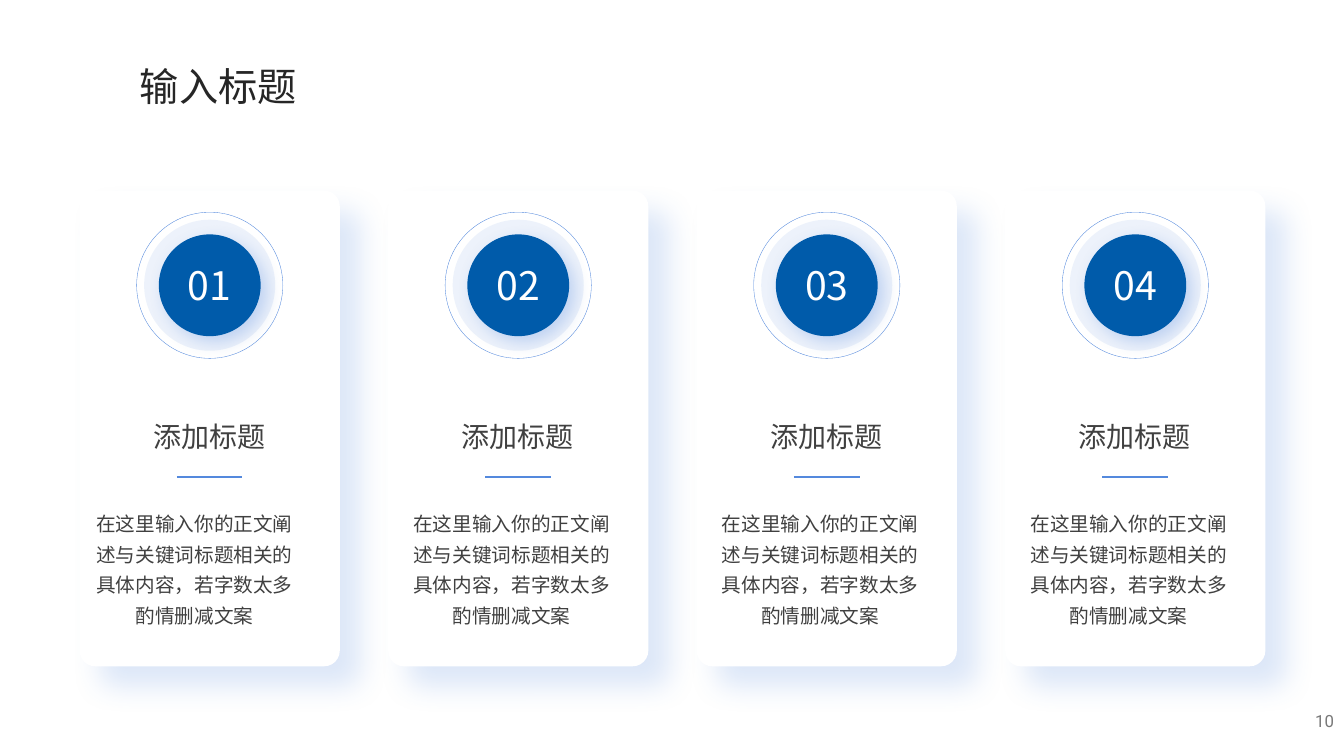
from dataclasses import dataclass

from lxml import etree
from pptx import Presentation
from pptx.dml.color import RGBColor
from pptx.enum.shapes import MSO_CONNECTOR, MSO_SHAPE
from pptx.enum.text import MSO_ANCHOR, MSO_AUTO_SIZE, PP_ALIGN
from pptx.oxml.ns import qn
from pptx.util import Inches, Pt

OVAL, ROUND = MSO_SHAPE.OVAL, MSO_SHAPE.ROUNDED_RECTANGLE
LINE = MSO_CONNECTOR.STRAIGHT
LEFT, MID, RIGHT = PP_ALIGN.LEFT, PP_ALIGN.CENTER, PP_ALIGN.RIGHT
TOP, CENTER = MSO_ANCHOR.TOP, MSO_ANCHOR.MIDDLE
FIT = MSO_AUTO_SIZE.SHAPE_TO_FIT_TEXT

TITLE = "输入标题"
PAGE = "10"
BODY = "在这里输入你的正文阐述与关键词标题相关的具体内容，若字数太多酌情删减文案"
CARDS = [
    ("01", "添加标题", BODY, 0.01, 2.26),
    ("02", "添加标题", BODY, 0.11, 2.23),
    ("03", "添加标题", BODY, 0.11, 2.23),
    ("04", "添加标题", BODY, 0.11, 2.23),
]


@dataclass(frozen=True)
class Theme:
    blue: str = "005BAA"
    tint: str = "5489DD"
    white: str = "FFFFFF"
    dark: str = "262626"
    text: str = "404040"
    gray: str = "797979"
    font: str = "Noto Sans CJK SC"
    latin: str = "Roboto"
    big: int = 28
    head: int = 20
    body: int = 14
    small: int = 12


T = Theme()
X, Y, W, H = 0.79, 1.89, 2.58, 4.72
STEP = 3.06
HUB = 2.83
RULE = 0.65

prs = Presentation()
prs.slide_width, prs.slide_height = Inches(13.33), Inches(7.5)
slide = prs.slides.add_slide(prs.slide_layouts[6])
shapes = slide.shapes


def rgb(code):
    return RGBColor.from_string(code)


def tone(color, alpha):
    node = etree.SubElement(color, qn("a:alpha"))
    node.set("val", str(alpha * 1000))


def glow(shape, alpha, blur, dist):
    effects = shape._element.spPr.find(qn("a:effectLst"))
    shadow = etree.SubElement(effects, qn("a:outerShdw"))
    for key, val in (("blurRad", Pt(blur)), ("dist", Pt(dist)),
                     ("dir", 45 * 60000), ("algn", "tl"), ("rotWithShape", 0)):
        shadow.set(key, str(val))
    color = etree.SubElement(shadow, qn("a:srgbClr"))
    color.set("val", T.tint)
    tone(color, alpha)


def block(kind, x, y, w, h, fill=None, line=None):
    shape = shapes.add_shape(kind, Inches(x), Inches(y), Inches(w), Inches(h))
    shape.shadow.inherit = False
    if fill:
        shape.fill.solid()
        shape.fill.fore_color.rgb = rgb(fill)
    else:
        shape.fill.background()
    if line:
        shape.line.color.rgb = rgb(line)
        shape.line.width = Pt(0.25)
    else:
        shape.line.fill.background()
    return shape


def disc(mid, size, fill=None, line=None):
    return block(OVAL, mid - size / 2, HUB - size / 2, size, size, fill, line)


def write(frame, text, size, color, align=LEFT, font=T.font):
    para = frame.paragraphs[0]
    para.alignment = align
    run = para.add_run()
    run.text = text
    run.font.size = Pt(size)
    run.font.name = font
    run.font.color.rgb = rgb(color)
    east = etree.SubElement(run.font._element, qn("a:ea"))
    east.set("typeface", font)
    return para


def label(x, y, w, h, wrap=True, anchor=TOP, grow=True):
    box = shapes.add_textbox(Inches(x), Inches(y), Inches(w), Inches(h))
    frame = box.text_frame
    frame.word_wrap = wrap
    frame.vertical_anchor = anchor
    if grow:
        frame.auto_size = FIT
    return frame


def card(x, num, head, body, shift, width):
    mid = x + W / 2
    panel = block(ROUND, x, Y, W, H, T.white)
    panel.adjustments[0] = 0.06
    glow(panel, 20, 20, 20)

    write(label(x + 0.63, 4.11, 1.32, 0.44, wrap=False), head, T.head, T.text)
    para = write(label(x + shift, 4.96, width, 1.33), body, T.body, T.text, MID)
    para.line_spacing = 1.3

    halo = disc(mid, 1.3, T.tint)
    tone(halo._element.spPr.find(qn("a:solidFill"))[0], 10)
    badge = disc(mid, 1.01, T.blue)
    glow(badge, 30, 12, 6)
    badge.text_frame.vertical_anchor = CENTER
    write(badge.text_frame, num, T.big, T.white, MID)
    disc(mid, 1.45, line=T.tint)

    rule = shapes.add_connector(LINE, Inches(mid - RULE / 2), Inches(4.73),
                                Inches(mid + RULE / 2), Inches(4.73))
    rule.line.color.rgb = rgb(T.tint)
    rule.line.width = Pt(1.5)
    etree.SubElement(rule._element.spPr, qn("a:effectLst"))


for i, data in enumerate(CARDS):
    card(X + i * STEP, *data)

write(label(10.33, 6.95, 3, 0.4, anchor=CENTER, grow=False),
      PAGE, T.small, T.gray, RIGHT, T.latin)
write(label(1.29, 0.57, 1.77, 0.57, wrap=False), TITLE, T.big, T.dark)

prs.save("out.pptx")
